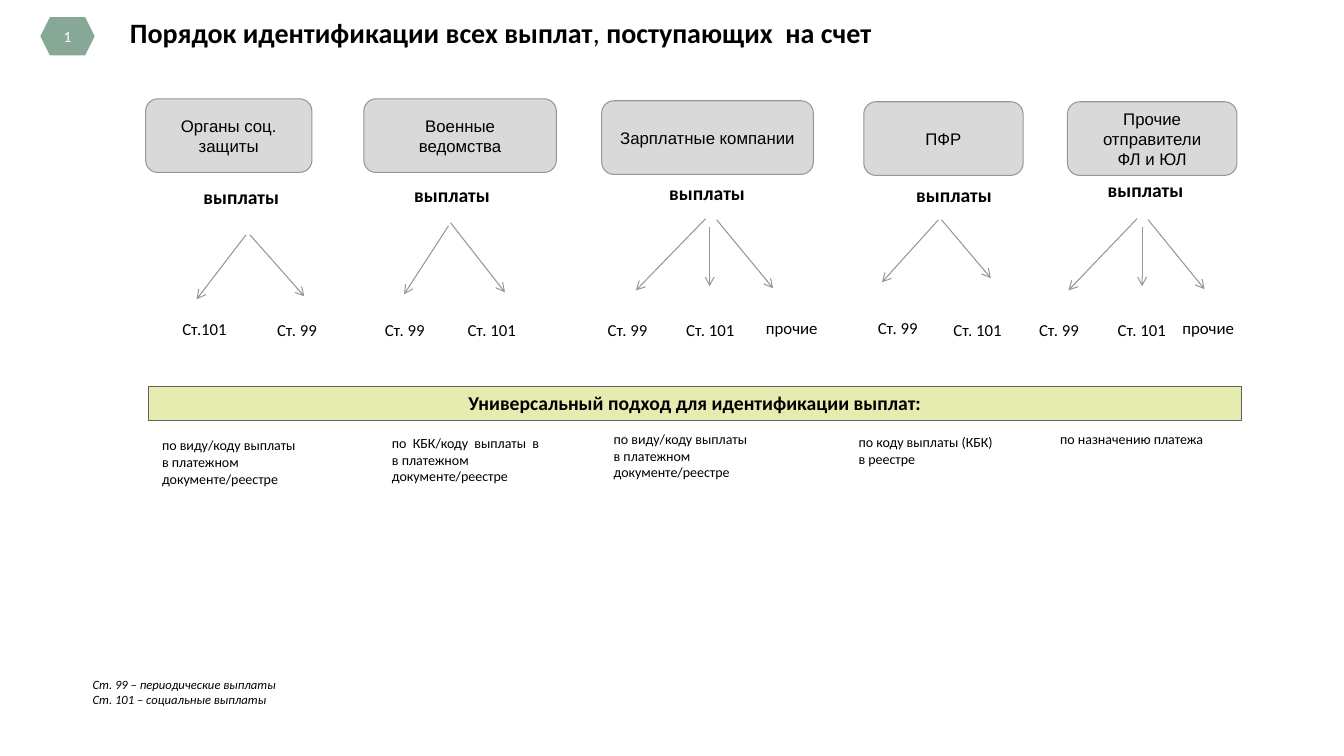
"""Build the slide on how incoming account payments are identified."""
from dataclasses import dataclass

from lxml import etree
from pptx import Presentation
from pptx.dml.color import RGBColor
from pptx.enum.shapes import MSO_CONNECTOR, MSO_SHAPE
from pptx.enum.text import MSO_ANCHOR, PP_ALIGN
from pptx.oxml.ns import qn
from pptx.util import Pt

ROUNDED, RECTANGLE, HEXAGON = MSO_SHAPE.ROUNDED_RECTANGLE, MSO_SHAPE.RECTANGLE, MSO_SHAPE.HEXAGON
STRAIGHT = MSO_CONNECTOR.STRAIGHT
TOP, MIDDLE = MSO_ANCHOR.TOP, MSO_ANCHOR.MIDDLE
LEFT, CENTER = PP_ALIGN.LEFT, PP_ALIGN.CENTER

BLACK, WHITE, GRAY, BOX_FILL = "000000", "FFFFFF", "969696", "D9D9D9"
BAR_FILL, BAR_LINE, BADGE_FILL = "E6ECB0", "606060", "87A896"
BOX_HEIGHT = 52.6
ARTICLE_HEIGHT = 21.8
ARTICLE_WIDTHS = {"Ст.101": 49.7, "Ст. 101": 52.6, "Ст. 99": 46.8, "прочие": 51.8}


@dataclass(frozen=True)
class Frame:
    left: float
    top: float
    width: float
    height: float


@dataclass(frozen=True)
class TextStyle:
    size: float
    font: str = "Calibri"
    color: str = BLACK
    bold: bool = False
    italic: bool = False
    align: PP_ALIGN = LEFT
    anchor: MSO_ANCHOR = TOP


@dataclass(frozen=True)
class Arrow:
    start_x: float
    start_y: float
    end_x: float
    end_y: float


@dataclass(frozen=True)
class Article:
    text: str
    left: float
    top: float = 224.6


@dataclass(frozen=True)
class Sender:
    name: list[str]
    box: Frame
    payments: Frame
    arrows: list[Arrow]
    articles: list[Article]
    basis: list[str]
    basis_frame: Frame


BOX_STYLE = TextStyle(12, font="Arial", align=CENTER, anchor=MIDDLE)
PAYMENTS_STYLE = TextStyle(14, bold=True)
ARTICLE_STYLE = TextStyle(12)
BASIS_STYLE = TextStyle(10)
BAR_STYLE = TextStyle(14, bold=True, align=CENTER)
BADGE_STYLE = TextStyle(11, color=WHITE, align=CENTER, anchor=MIDDLE)
TITLE_STYLE = TextStyle(20)
NOTE_STYLE = TextStyle(9, italic=True)

SENDERS = [
    Sender(
        ["Органы соц. защиты"], Frame(104, 70.6, 118.8, BOX_HEIGHT), Frame(138.2, 128.9, 69, 24.5),
        [Arrow(175.7, 167.8, 140.4, 213.8), Arrow(178.6, 167.8, 217.4, 211.7)],
        [Article("Ст.101", 123.1, 223.9), Article("Ст. 99", 190.8)],
        ["по виду/коду выплаты", "в платежном документе/реестре"], Frame(108.7, 308.2, 125.3, 43.9)),
    Sender(
        ["Военные", "ведомства"], Frame(259.9, 70.6, 137.5, BOX_HEIGHT), Frame(288.7, 127.4, 69, 24.5),
        [Arrow(320.4, 161.3, 288.7, 210.2), Arrow(321.8, 159.1, 360.7, 208.8)],
        [Article("Ст. 99", 267.8), Article("Ст. 101", 326.9)],
        ["по  КБК/коду  выплаты  в", "в платежном документе/реестре"], Frame(272.9, 306.7, 137.5, 55.4)),
    Sender(
        ["Зарплатные компании"], Frame(429.8, 72, 151.2, BOX_HEIGHT), Frame(470.9, 126, 69, 24.5),
        [Arrow(504, 156.2, 454.3, 207.4), Arrow(506.9, 162, 506.9, 204.5), Arrow(511.9, 157, 552.2, 205.9)],
        [Article("Ст. 99", 427), Article("Ст. 101", 483.1), Article("прочие", 540, 223.2)],
        ["по виду/коду выплаты", "в платежном документе/реестре"], Frame(431.3, 303.8, 133.9, 55.4)),
    Sender(
        ["ПФР"], Frame(617, 72.7, 113.8, BOX_HEIGHT), Frame(647.3, 127.4, 69, 24.5),
        [Arrow(670.3, 157, 630, 201.6), Arrow(672.5, 157, 707.8, 198.7)],
        [Article("Ст. 99", 619.9, 223.2), Article("Ст. 101", 673.9)],
        ["по коду выплаты (КБК) в реестре"], Frame(606.2, 306, 116.6, 31.7)),
    Sender(
        ["Прочие отправители", "ФЛ и ЮЛ"], Frame(762.5, 72.7, 121, BOX_HEIGHT), Frame(784.1, 123.8, 69, 24.5),
        [Arrow(812.2, 156.2, 763.2, 207.4), Arrow(815.8, 162, 815.8, 204.5), Arrow(820.1, 157, 860.4, 206.6)],
        [Article("Ст. 99", 735.1), Article("Ст. 101", 791.3), Article("прочие", 837.4, 223.2)],
        ["по назначению платежа"], Frame(750.2, 303.8, 137.5, 19.4)),
]


def rgb(color: str) -> RGBColor:
    return RGBColor.from_string(color)


def place(frame: Frame) -> tuple[Pt, Pt, Pt, Pt]:
    return Pt(frame.left), Pt(frame.top), Pt(frame.width), Pt(frame.height)


def write(shape, lines: list[str], style: TextStyle, wrap: bool = True) -> None:
    text_frame = shape.text_frame
    text_frame.word_wrap = wrap
    text_frame.vertical_anchor = style.anchor
    text_frame.text = "\n".join(lines)
    for paragraph in text_frame.paragraphs:
        paragraph.alignment = style.align
        font = paragraph.font
        font.name, font.size = style.font, Pt(style.size)
        font.bold, font.italic = style.bold, style.italic
        font.color.rgb = rgb(style.color)


def add_label(slide, frame: Frame, lines: list[str], style: TextStyle, wrap: bool = True):
    label = slide.shapes.add_textbox(*place(frame))
    write(label, lines, style, wrap)
    return label


def add_block(slide, kind: MSO_SHAPE, frame: Frame, fill: str, line: str | None,
              lines: list[str], style: TextStyle):
    block = slide.shapes.add_shape(kind, *place(frame))
    block.shadow.inherit = False
    block.fill.solid()
    block.fill.fore_color.rgb = rgb(fill)
    if line:
        block.line.color.rgb = rgb(line)
        block.line.width = Pt(0.75)
    else:
        block.line.fill.background()
    write(block, lines, style)
    return block


def add_arrow(slide, arrow: Arrow) -> None:
    connector = slide.shapes.add_connector(
        STRAIGHT, Pt(arrow.start_x), Pt(arrow.start_y), Pt(arrow.end_x), Pt(arrow.end_y))
    connector.line.color.rgb = rgb(GRAY)
    connector.line.width = Pt(0.75)
    properties = connector._element.spPr
    etree.SubElement(properties.find(qn("a:ln")), qn("a:tailEnd"), type="arrow")
    etree.SubElement(properties, qn("a:effectLst"))


def add_sender(slide, sender: Sender) -> None:
    add_block(slide, ROUNDED, sender.box, BOX_FILL, GRAY, sender.name, BOX_STYLE)
    add_label(slide, sender.payments, ["выплаты"], PAYMENTS_STYLE, wrap=False)
    for arrow in sender.arrows:
        add_arrow(slide, arrow)
    for article in sender.articles:
        frame = Frame(article.left, article.top, ARTICLE_WIDTHS[article.text], ARTICLE_HEIGHT)
        add_label(slide, frame, [article.text], ARTICLE_STYLE, wrap=False)
    add_label(slide, sender.basis_frame, sender.basis, BASIS_STYLE)


def add_title(slide) -> None:
    title = add_label(slide, Frame(85.7, 5, 851.8, 32.4), [""], TITLE_STYLE)
    paragraph = title.text_frame.paragraphs[0]
    paragraph.line_spacing = 1.1
    paragraph.space_after = Pt(24)
    for text, bold in [("Порядок идентификации всех выплат", True), (", ", False),
                       ("поступающих  на счет", True)]:
        run = paragraph.add_run()
        run.text = text
        run.font.bold = bold


def add_badge(slide) -> None:
    badge = add_block(slide, HEXAGON, Frame(28.8, 12.2, 38.9, 27.4), BADGE_FILL, None, ["1"], BADGE_STYLE)
    text_frame = badge.text_frame
    text_frame.margin_left = text_frame.margin_right = Pt(3.6)
    text_frame.margin_top = text_frame.margin_bottom = Pt(3.6)


def main() -> None:
    presentation = Presentation()
    presentation.slide_width, presentation.slide_height = Pt(960), Pt(540)
    slide = presentation.slides.add_slide(presentation.slide_layouts[6])
    add_badge(slide)
    add_title(slide)
    for sender in SENDERS:
        add_sender(slide, sender)
    add_block(slide, RECTANGLE, Frame(105.8, 276, 781.2, 24.5), BAR_FILL, BAR_LINE,
              ["Универсальный подход для идентификации выплат:"], BAR_STYLE)
    add_label(slide, Frame(59, 480.2, 255.6, 28.8),
              ["Ст. 99 – периодические выплаты", "Ст. 101 – социальные выплаты"], NOTE_STYLE)
    presentation.save("out.pptx")


if __name__ == "__main__":
    main()
